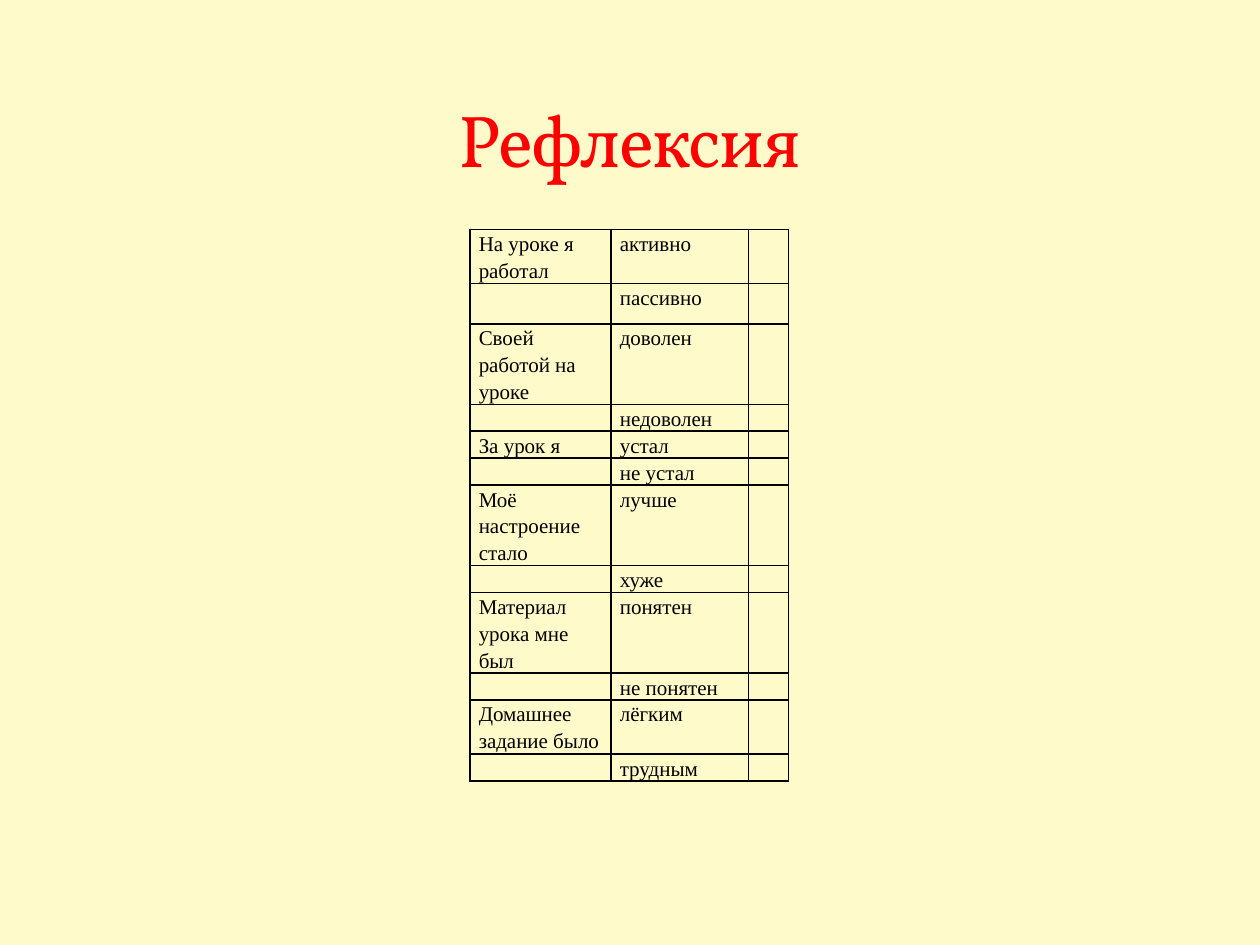
from lxml import etree
from pptx import Presentation
from pptx.dml.color import RGBColor
from pptx.enum.text import MSO_ANCHOR, PP_ALIGN
from pptx.oxml import parse_xml
from pptx.oxml.ns import nsdecls, qn
from pptx.util import Inches, Pt

CREAM = RGBColor(0xFE, 0xFA, 0xC9)
RED = RGBColor(0xFF, 0x00, 0x00)
BLACK = RGBColor(0x00, 0x00, 0x00)
OUTLINE = RGBColor(0xE0, 0xDD, 0xB1)

COLUMN_WIDTHS = [1.12, 1.09, 0.32]
# Question, answer, row height
ROWS = [
    ("На уроке я работал", "активно", 0.43),
    ("", "пассивно", 0.32),
    ("Своей работой на уроке", "доволен", 0.64),
    ("", "недоволен", 0.21),
    ("За урок я", "устал", 0.21),
    ("", "не устал", 0.21),
    ("Моё настроение стало", "лучше", 0.64),
    ("", "хуже", 0.21),
    ("Материал урока мне был", "понятен", 0.64),
    ("", "не понятен", 0.21),
    ("Домашнее задание было", "лёгким", 0.43),
    ("", "трудным", 0.21),
]


def add_borders(cell):
    properties = cell._tc.get_or_add_tcPr()
    for position, side in enumerate(("lnL", "lnR", "lnT", "lnB")):
        properties.insert(position, parse_xml(
            f'<a:{side} {nsdecls("a")} w="{Pt(1)}"><a:solidFill>'
            f'<a:srgbClr val="{BLACK}"/></a:solidFill></a:{side}>'))


presentation = Presentation()
presentation.slide_width = Inches(10)
presentation.slide_height = Inches(7.5)
slide = presentation.slides.add_slide(presentation.slide_layouts[5])
slide.background.fill.solid()
slide.background.fill.fore_color.rgb = CREAM

# Title
title = slide.shapes.title
title.left, title.top = Inches(0.5), Inches(0.17)
title.width, title.height = Inches(9), Inches(1.33)
title.text_frame.vertical_anchor = MSO_ANCHOR.BOTTOM
paragraph = title.text_frame.paragraphs[0]
paragraph.alignment = PP_ALIGN.CENTER
run = paragraph.add_run()
run.text = "Рефлексия"
run.font.name = "Vollkorn"
run.font.size = Pt(42)
run.font.color.rgb = RED
run_properties = run.font._element
run_properties.set("spc", "-100")
run_properties.insert(0, parse_xml(
    f'<a:ln {nsdecls("a")} w="{Pt(0.25)}"><a:solidFill><a:srgbClr val="{OUTLINE}">'
    '<a:alpha val="25000"/></a:srgbClr></a:solidFill></a:ln>'))

# Reflection table
table_height = sum(height for _, _, height in ROWS)
table = slide.shapes.add_table(
    len(ROWS), len(COLUMN_WIDTHS), Inches(3.73), Inches(1.82),
    Inches(sum(COLUMN_WIDTHS)), Inches(table_height)).table
table.first_row = False
table.horz_banding = False
for column, width in zip(table.columns, COLUMN_WIDTHS):
    column.width = Inches(width)

for row, (question, answer, height) in zip(table.rows, ROWS):
    row.height = Inches(height)
    for cell, text in zip(row.cells, (question, answer, "")):
        cell.fill.background()
        add_borders(cell)
        cell.margin_left = cell.margin_right = Inches(0.07)
        cell.margin_top = cell.margin_bottom = 0
        paragraph = cell.text_frame.paragraphs[0]
        paragraph.line_spacing = 1.15
        paragraph.font.name = "Times New Roman"
        paragraph.font.size = Pt(12)
        paragraph.font.color.rgb = BLACK
        if text:
            paragraph.add_run().text = text
        else:
            # An empty cell takes its line height from the end mark
            etree.SubElement(paragraph._p, qn("a:endParaRPr"), sz="1200")

presentation.save("out.pptx")
